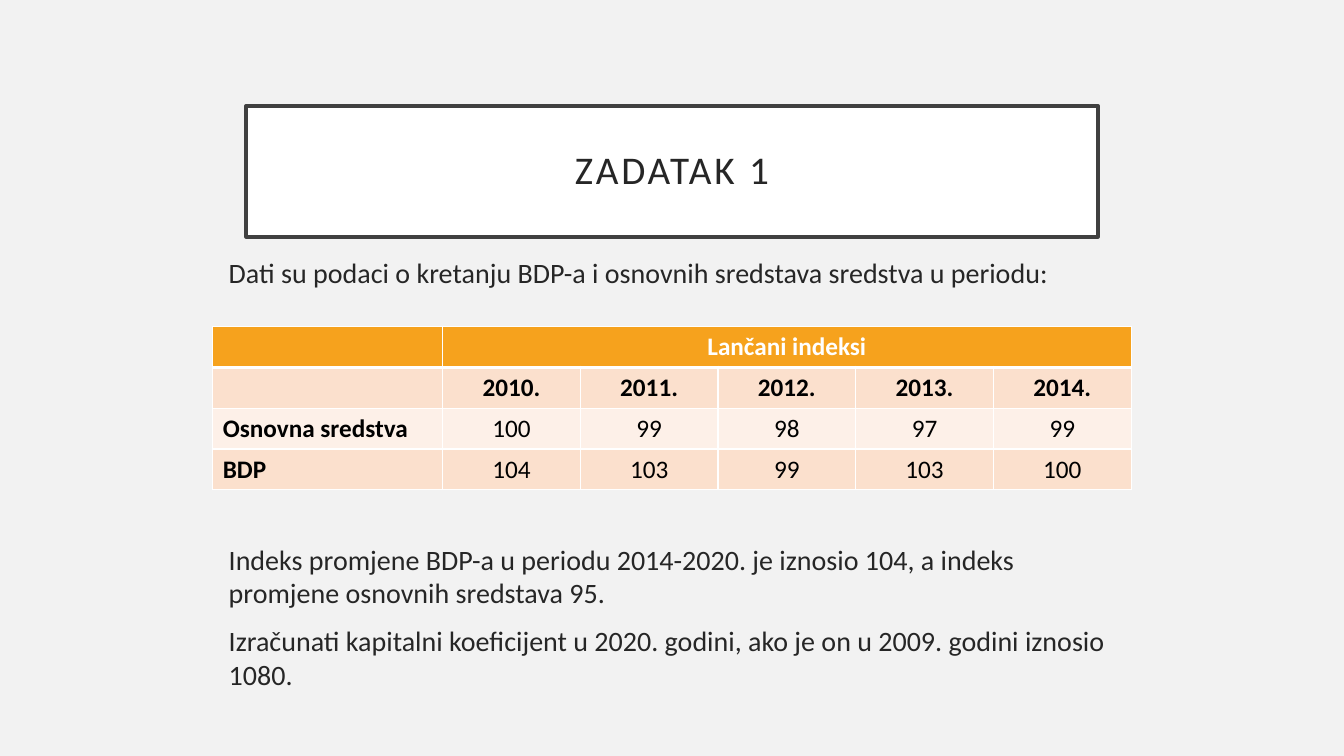
from lxml import etree
from pptx import Presentation
from pptx.dml.color import RGBColor
from pptx.enum.text import MSO_ANCHOR, MSO_AUTO_SIZE, PP_ALIGN
from pptx.oxml.ns import qn
from pptx.util import Inches, Pt

LEFT, CENTER = PP_ALIGN.LEFT, PP_ALIGN.CENTER
MIDDLE = MSO_ANCHOR.MIDDLE
FIXED = MSO_AUTO_SIZE.NONE
FONT = "Calibri"
COLORS = {
    "back": "F2F2F2", "white": "FFFFFF", "frame": "404040", "text": "262626",
    "black": "000000", "head": "F6A21D", "dark": "FBE0CD", "light": "FDF0E8",
}
INTRO = ["Dati su podaci o kretanju BDP-a i osnovnih sredstava sredstva u periodu:"]
TASK = [
    "Indeks promjene BDP-a u periodu 2014-2020. je iznosio 104, a indeks promjene osnovnih sredstava 95.",
    "Izračunati kapitalni koeficijent u 2020. godini, ako je on u 2009. godini iznosio 1080.",
]
ROWS = [
    ["", "Lančani indeksi", "", "", "", ""],
    ["", "2010.", "2011.", "2012.", "2013.", "2014."],
    ["Osnovna sredstva", "100", "99", "98", "97", "99"],
    ["BDP", "104", "103", "99", "103", "100"],
]
BANDS = ["head", "dark", "light", "dark"]


def color(name):
    return RGBColor.from_string(COLORS[name])


def style(font, tint, **values):
    font.color.rgb = color(tint)
    for key, value in {"name": FONT, **values}.items():
        setattr(font, key, value)


def place(shape, box):
    for key, value in zip(("left", "top", "width", "height"), box):
        setattr(shape, key, Inches(value))


def add_title(slide, box, text):
    title = slide.shapes.title
    place(title, box)
    title.fill.solid()
    title.fill.fore_color.rgb = color("white")
    title.line.color.rgb = color("frame")
    title.line.width = Pt(2.5)
    frame = title.text_frame
    edge = Inches(0.2)
    values = {
        "auto_size": FIXED, "word_wrap": True, "vertical_anchor": MIDDLE,
        "margin_left": edge, "margin_right": edge,
        "margin_top": edge, "margin_bottom": edge,
    }
    for key, value in values.items():
        setattr(frame, key, value)
    para = frame.paragraphs[0]
    para.alignment = CENTER
    para.line_spacing = 0.9
    run = para.add_run()
    run.text = text
    style(run.font, "text", size=Pt(28), bold=False)
    run._r.get_or_add_rPr().set("spc", "200")


def add_text(slide, box, lines):
    frame = slide.shapes.add_textbox(*map(Inches, box)).text_frame
    frame.word_wrap = True
    for index, line in enumerate(lines):
        para = frame.add_paragraph() if index else frame.paragraphs[0]
        para.space_before = Pt(10 if index else 0)
        run = para.add_run()
        run.text = line
        style(run.font, "text", size=Pt(20))


def add_edge(cell, side, width):
    line = etree.SubElement(cell._tc.get_or_add_tcPr(), qn("a:" + side), w=str(Pt(width)))
    fill = etree.SubElement(line, qn("a:solidFill"))
    etree.SubElement(fill, qn("a:srgbClr"), val=COLORS["white"])


def fill_cell(cell, text, row, col):
    for side in ("lnL", "lnR", "lnT", "lnB"):
        thick = (row, side) in ((0, "lnB"), (1, "lnT"))
        add_edge(cell, side, 3 if thick else 1)
    cell.fill.solid()
    cell.fill.fore_color.rgb = color(BANDS[row])
    cell.vertical_anchor = MSO_ANCHOR.TOP
    para = cell.text_frame.paragraphs[0]
    para.alignment = CENTER if col else LEFT
    style(para.font, "black", size=Pt(18))
    if text:
        run = para.add_run()
        run.text = text
        style(run.font, "black" if row else "white", size=Pt(18), bold=row < 2 or col == 0)


def add_grid(slide, box):
    count = len(ROWS[0])
    table = slide.shapes.add_table(len(ROWS), count, *map(Inches, box)).table
    first = 2.28
    for col, part in enumerate(table.columns):
        part.width = Inches((box[2] - first) / (count - 1) if col else first)
    for part in table.rows:
        part.height = Inches(box[3] / len(ROWS))
    for row, texts in enumerate(ROWS):
        for col, text in enumerate(texts):
            fill_cell(table.cell(row, col), text, row, col)
    table.cell(0, 1).merge(table.cell(0, count - 1))


def main():
    deck = Presentation()
    deck.slide_width, deck.slide_height = Inches(13.33), Inches(7.5)
    slide = deck.slides.add_slide(deck.slide_layouts[5])
    slide.background.fill.solid()
    slide.background.fill.fore_color.rgb = color("back")
    add_title(slide, (2.44, 1.05, 8.45, 1.3), "ZADATAK 1")
    add_text(slide, (2.17, 2.49, 8.99, 0.45), INTRO)
    add_grid(slide, (2.11, 3.24, 9.11, 1.62))
    add_text(slide, (2.17, 5.33, 8.99, 1.69), TASK)
    deck.save("out.pptx")


if __name__ == "__main__":
    main()
